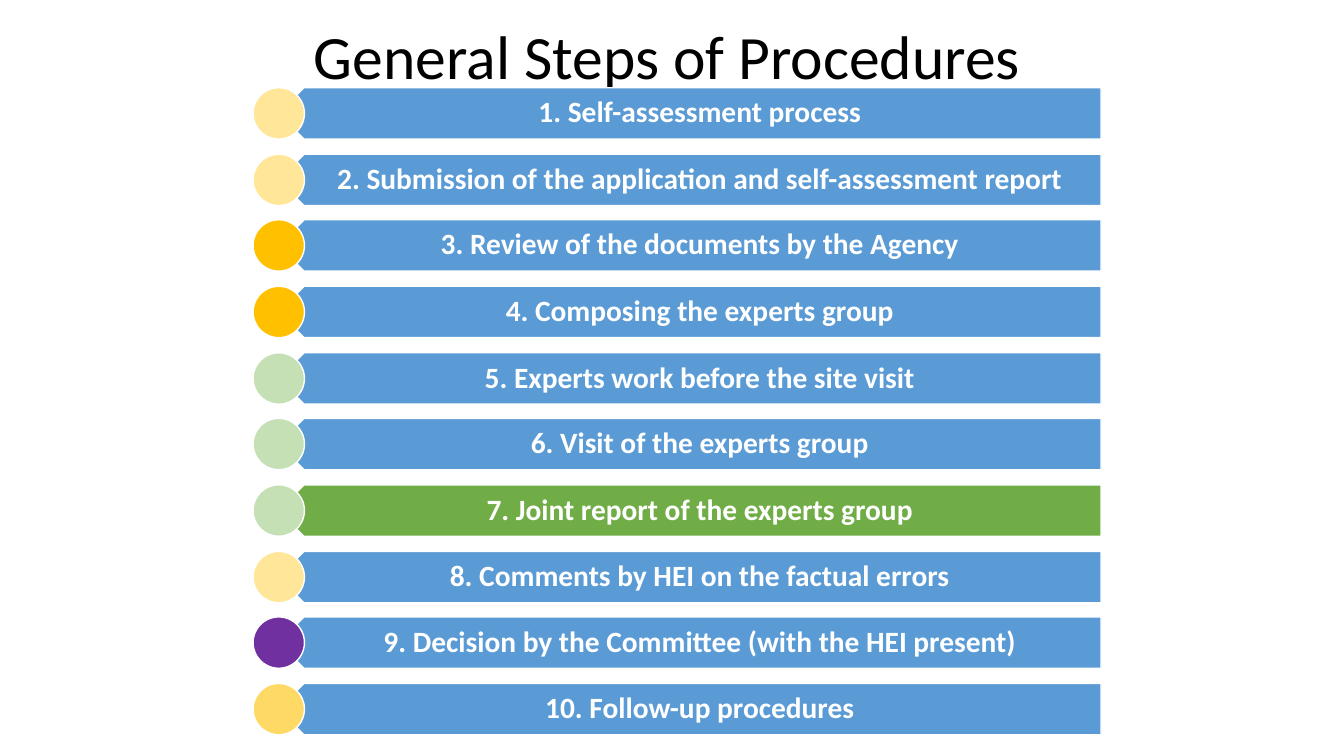
from pptx import Presentation
from pptx.dml.color import RGBColor
from pptx.enum.shapes import MSO_SHAPE
from pptx.enum.text import MSO_ANCHOR, MSO_AUTO_SIZE, PP_ALIGN
from pptx.util import Emu, Pt

EMU_PER_PX = 9144

BLACK = RGBColor(0x00, 0x00, 0x00)
WHITE = RGBColor(0xFF, 0xFF, 0xFF)
BLUE = RGBColor(0x5B, 0x9B, 0xD5)
GREEN = RGBColor(0x70, 0xAD, 0x47)
PALE_YELLOW = RGBColor(0xFF, 0xE6, 0x99)
YELLOW = RGBColor(0xFF, 0xD9, 0x66)
AMBER = RGBColor(0xFF, 0xC0, 0x00)
PALE_GREEN = RGBColor(0xC5, 0xE0, 0xB4)
PURPLE = RGBColor(0x70, 0x30, 0xA0)

STEPS = [
    ("Self-assessment process", PALE_YELLOW, BLUE),
    ("Submission of the application and self-assessment report", PALE_YELLOW, BLUE),
    ("Review of the documents by the Agency", AMBER, BLUE),
    ("Composing the experts group", AMBER, BLUE),
    ("Experts work before the site visit", PALE_GREEN, BLUE),
    ("Visit of the experts group", PALE_GREEN, BLUE),
    ("Joint report of the experts group", PALE_GREEN, GREEN),
    ("Comments by HEI on the factual errors", PALE_YELLOW, BLUE),
    ("Decision by the Committee (with the HEI present)", PURPLE, BLUE),
    ("Follow-up procedures", YELLOW, BLUE),
]
FIRST_TOP, LAST_TOP, ROW_HEIGHT = 87, 678, 51


def px(*lengths):
    return [Emu(length * EMU_PER_PX) for length in lengths]


class StepsSlide:
    font = "Calibri"

    def __init__(self, presentation):
        self.slide = presentation.slides.add_slide(presentation.slide_layouts[5])
        self.steps = None

    def set_text(self, frame, text, size, color, bold=False):
        frame.word_wrap = True
        frame.auto_size = MSO_AUTO_SIZE.NONE
        frame.vertical_anchor = MSO_ANCHOR.MIDDLE
        paragraph = frame.paragraphs[0]
        paragraph.alignment = PP_ALIGN.CENTER
        paragraph.line_spacing = 0.9
        run = paragraph.add_run()
        run.text = text
        run.font.name = self.font
        run.font.size = Pt(size)
        run.font.bold = bold
        run.font.color.rgb = color

    def title(self, text, *box):
        heading = self.slide.shapes.title
        heading.left, heading.top, heading.width, heading.height = px(*box)
        self.set_text(heading.text_frame, text, 44, BLACK)

    def start_steps(self):
        self.steps = self.slide.shapes.add_group_shape().shapes

    def shape(self, preset, fill, *box, rotation=0):
        figure = self.steps.add_shape(preset, *px(*box))
        figure.rotation = rotation
        figure.shadow.inherit = False
        figure.fill.solid()
        figure.fill.fore_color.rgb = fill
        figure.line.color.rgb = WHITE
        figure.line.width = Pt(1)

    def label(self, text, *box):
        frame = self.steps.add_textbox(*px(*box)).text_frame
        (frame.margin_left, frame.margin_top,
         frame.margin_right, frame.margin_bottom) = px(22, 9, 16, 9)
        self.set_text(frame, text, 21, WHITE, bold=True)

    def step(self, text, marker, bar, top):
        self.shape(MSO_SHAPE.PENTAGON, bar, 276, top, 816, ROW_HEIGHT, rotation=180)
        self.label(text, 289, top, 804, ROW_HEIGHT)
        self.shape(MSO_SHAPE.OVAL, marker, 251, top, ROW_HEIGHT, ROW_HEIGHT)


def main():
    presentation = Presentation()
    presentation.slide_width, presentation.slide_height = px(1333, 750)
    page = StepsSlide(presentation)
    page.title("General Steps of Procedures", 87, 0, 1150, 119)
    page.start_steps()
    pitch = (LAST_TOP - FIRST_TOP) / (len(STEPS) - 1)
    for index, (text, marker, bar) in enumerate(STEPS):
        top = FIRST_TOP + round(index * pitch)
        page.step(f"{index + 1}. {text}", marker, bar, top)
    presentation.save("out.pptx")


if __name__ == "__main__":
    main()
